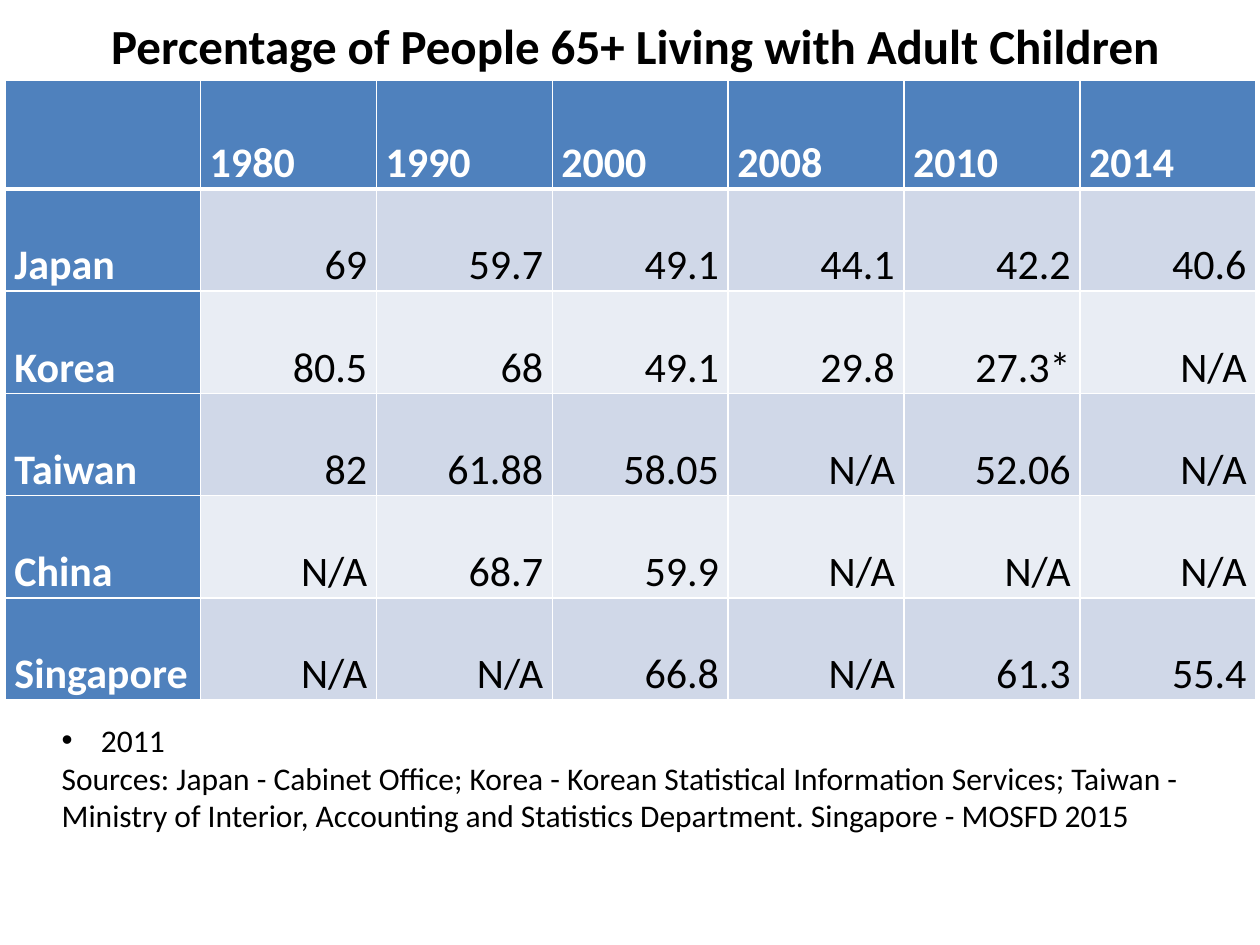
"""Build a slide with a table of older people living with adult children."""
import pptx
import pptx.dml.color
import pptx.enum.text
import pptx.oxml.ns
import pptx.util
from lxml import etree

Pt = pptx.util.Pt
ALIGN = pptx.enum.text.PP_ALIGN
ANCHOR = pptx.enum.text.MSO_ANCHOR
FONT = "Calibri"
COLORS = {
    "head": "4F81BD",
    "odd": "D0D8E8",
    "even": "E9EDF4",
    "white": "FFFFFF",
    "black": "000000",
}
ROWS = [
    ["", "1980", "1990", "2000", "2008", "2010", "2014"],
    ["Japan", "69", "59.7", "49.1", "44.1", "42.2", "40.6"],
    ["Korea", "80.5", "68", "49.1", "29.8", "27.3*", "N/A"],
    ["Taiwan", "82", "61.88", "58.05", "N/A", "52.06", "N/A"],
    ["China", "N/A", "68.7", "59.9", "N/A", "N/A", "N/A"],
    ["Singapore", "N/A", "N/A", "66.8", "N/A", "61.3", "55.4"],
]
NOTES = [
    ("2011", "•"),
    ("Sources: Japan - Cabinet Office; Korea - Korean Statistical Information "
     "Services; Taiwan - Ministry of Interior, Accounting and Statistics "
     "Department. Singapore - MOSFD 2015", None),
]


def rgb(name):
    return pptx.dml.color.RGBColor.from_string(COLORS[name])


def add_tag(parent, tag, **attrs):
    return etree.SubElement(parent, pptx.oxml.ns.qn(tag), **attrs)


def style(para, size, color="black", bold=False, align=ALIGN.LEFT):
    para.alignment = align
    para.space_before = Pt(0)
    para.font.name = FONT
    para.font.size = Pt(size)
    para.font.bold = bold
    para.font.color.rgb = rgb(color)


def place(shape, left, top, width, height):
    shape.left, shape.top = Pt(left), Pt(top)
    shape.width, shape.height = Pt(width), Pt(height)
    shape.text_frame.auto_size = pptx.enum.text.MSO_AUTO_SIZE.NONE


def add_title(slide, text):
    title = slide.shapes.title
    place(title, 3, 5, 720, 41)
    title.text_frame.text = text
    style(title.text_frame.paragraphs[0], 28, bold=True, align=ALIGN.CENTER)


def add_notes(slide, notes):
    body = slide.placeholders[1]
    place(body, 28, 408.25, 670, 73)
    frame = body.text_frame
    frame.text = "\n".join(text for text, mark in notes)
    for para, (text, mark) in zip(frame.paragraphs, notes):
        props = para._p.get_or_add_pPr()
        dent = Pt(22.5) if mark else 0
        props.set("marL", str(dent))
        props.set("indent", str(-dent))
        if mark:
            add_tag(props, "a:buFont", typeface="Arial")
            add_tag(props, "a:buChar", char=mark)
        else:
            add_tag(props, "a:buNone")
        style(para, 18)


def set_edges(cell, row):
    props = cell._tc.get_or_add_tcPr()
    for side in "LRTB":
        thick = (row, side) in [(0, "B"), (1, "T")]
        line = add_tag(props, "a:ln" + side, w=str(Pt(3 if thick else 1)))
        fill = add_tag(line, "a:solidFill")
        add_tag(fill, "a:srgbClr", val=COLORS["white"])


def fill_cell(cell, text, row, col):
    head = row == 0 or col == 0
    set_edges(cell, row)
    cell.fill.solid()
    cell.fill.fore_color.rgb = rgb("head" if head else "odd" if row % 2 else "even")
    cell.vertical_anchor = ANCHOR.BOTTOM
    cell.margin_left = cell.margin_right = Pt(5.25)
    cell.margin_top = cell.margin_bottom = 0
    cell.text = text
    style(cell.text_frame.paragraphs[0], 24, "white" if head else "black",
          head, ALIGN.LEFT if head else ALIGN.RIGHT)


def add_grid(slide, rows):
    frame = slide.shapes.add_table(len(rows), len(rows[0]),
                                   Pt(3), Pt(46), Pt(714.6), Pt(354))
    table = frame.table
    for i, col in enumerate(table.columns):
        col.width = Pt(100.5 if i else 111.6)
    for i, row in enumerate(table.rows):
        row.height = Pt(58.4 if i else 62)
    for i, row in enumerate(rows):
        for j, text in enumerate(row):
            fill_cell(table.cell(i, j), text, i, j)


def main():
    deck = pptx.Presentation()
    deck.slide_width, deck.slide_height = Pt(720), Pt(540)
    slide = deck.slides.add_slide(deck.slide_layouts[1])
    add_title(slide, "Percentage of People 65+ Living with Adult Children")
    add_grid(slide, ROWS)
    add_notes(slide, NOTES)
    deck.save("out.pptx")


if __name__ == "__main__":
    main()
